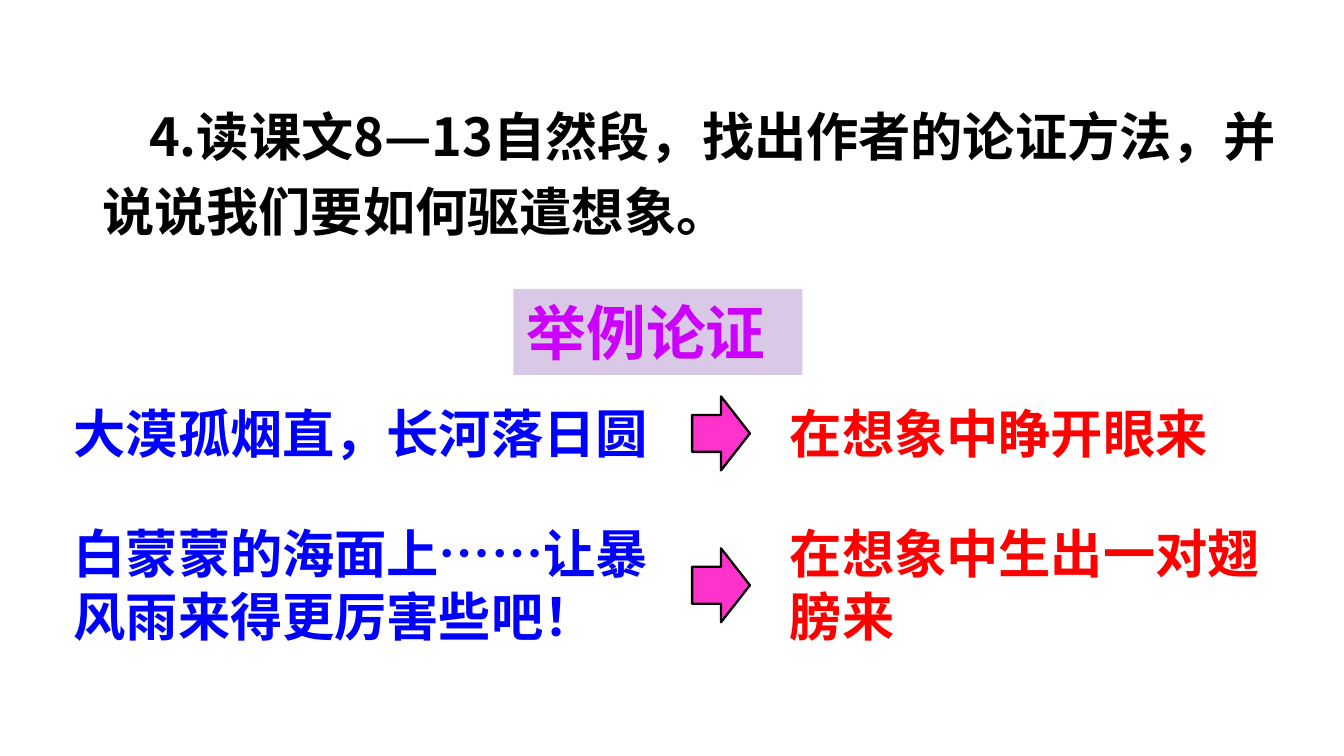
import pptx
import pptx.util
import pptx.dml.color
import pptx.enum.shapes
import pptx.enum.text
import pptx.oxml
import pptx.oxml.ns
from dataclasses import dataclass
from pptx.util import Inches


@dataclass(frozen=True)
class Theme:
    font: str = "Noto Sans CJK SC"
    question: str = "000000"
    example: str = "0000FF"
    lesson: str = "FF0000"
    method: str = "CC00FF"
    method_fill: str = "7030A0"
    method_alpha: int = 26
    arrow: str = "FF33CC"
    outline: str = "000000"
    body_size: int = 28
    method_size: int = 32


THEME = Theme()


def rgb(value):
    return pptx.dml.color.RGBColor.from_string(value)


def set_attrs(obj, values):
    for name, value in values.items():
        setattr(obj, name, value)


def write(shape, text, color, size=THEME.body_size,
          anchor=pptx.enum.text.MSO_ANCHOR.TOP, **paragraph_format):
    """Fill a shape with one bold, left-aligned paragraph."""
    tf = shape.text_frame
    set_attrs(tf, {
        "word_wrap": True,
        "auto_size": pptx.enum.text.MSO_AUTO_SIZE.NONE,
        "vertical_anchor": anchor,
    })
    p = tf.paragraphs[0]
    set_attrs(p, {"alignment": pptx.enum.text.PP_ALIGN.LEFT,
                  "space_before": pptx.util.Pt(0), **paragraph_format})
    r = p.add_run()
    r.text = text
    set_attrs(r.font, {"name": THEME.font, "size": pptx.util.Pt(size), "bold": True})
    r.font.color.rgb = rgb(color)
    # Chinese characters take their font from a:ea
    ea = pptx.oxml.parse_xml(
        f'<a:ea {pptx.oxml.ns.nsdecls("a")} typeface="{THEME.font}"/>')
    r.font._element.find(pptx.oxml.ns.qn("a:latin")).addnext(ea)


def add_question(s, text):
    title = s.shapes.title
    set_attrs(title, {"left": Inches(0.66), "top": Inches(0.63),
                      "width": Inches(9.02), "height": Inches(1.23)})
    write(title, text, THEME.question, line_spacing=1.2)
    title.text_frame.paragraphs[0]._p.get_or_add_pPr().set("indent", str(Inches(0.35)))


def add_text(s, text, color, *box):
    sp = s.shapes.add_textbox(*map(Inches, box))
    write(sp, text, color)


def add_filled(s, kind, fill, *box):
    sp = s.shapes.add_shape(kind, *map(Inches, box))
    sp.shadow.inherit = False
    sp.fill.solid()
    sp.fill.fore_color.rgb = rgb(fill)
    return sp


def add_arrow(s, top):
    sp = add_filled(s, pptx.enum.shapes.MSO_SHAPE.RIGHT_ARROW, THEME.arrow,
                    5.15, top, 0.43, 0.55)
    sp.line.color.rgb = rgb(THEME.outline)
    sp.line.width = pptx.util.Pt(1.25)


def add_method(s, text):
    sp = add_filled(s, pptx.enum.shapes.MSO_SHAPE.RECTANGLE, THEME.method_fill,
                    3.82, 2.15, 2.15, 0.64)
    sp.line.fill.background()
    color = sp._element.spPr.find(".//" + pptx.oxml.ns.qn("a:srgbClr"))
    color.append(pptx.oxml.parse_xml(
        f'<a:alpha {pptx.oxml.ns.nsdecls("a")} val="{THEME.method_alpha * 1000}"/>'))
    write(sp, text, THEME.method, THEME.method_size,
          pptx.enum.text.MSO_ANCHOR.MIDDLE)


def add_example(s, example, lesson, top, height, arrow_top):
    """One row: quotation, arrow, what it shows."""
    add_text(s, example, THEME.example, 0.45, top, 4.76, height)
    add_arrow(s, arrow_top)
    add_text(s, lesson, THEME.lesson, 5.78, top, 3.74, height)


def main():
    # Widescreen page, 16:9
    prs = pptx.Presentation()
    set_attrs(prs, {"slide_width": Inches(10), "slide_height": Inches(10 * 9 / 16)})
    s = prs.slides.add_slide(prs.slide_layouts.get_by_name("Title Only"))

    # Question
    add_question(s, "4.读课文8—13自然段，找出作者的论证方法，并说说我们要如何驱遣想象。")

    # Examples and their lessons
    add_example(s, "大漠孤烟直，长河落日圆", "在想象中睁开眼来", 2.94, 0.57, 2.95)
    add_example(s, "白蒙蒙的海面上……让暴风雨来得更厉害些吧！",
                "在想象中生出一对翅膀来", 3.83, 1.04, 4.08)

    # Method of argument
    add_method(s, "举例论证")

    prs.save("out.pptx")


if __name__ == "__main__":
    main()
